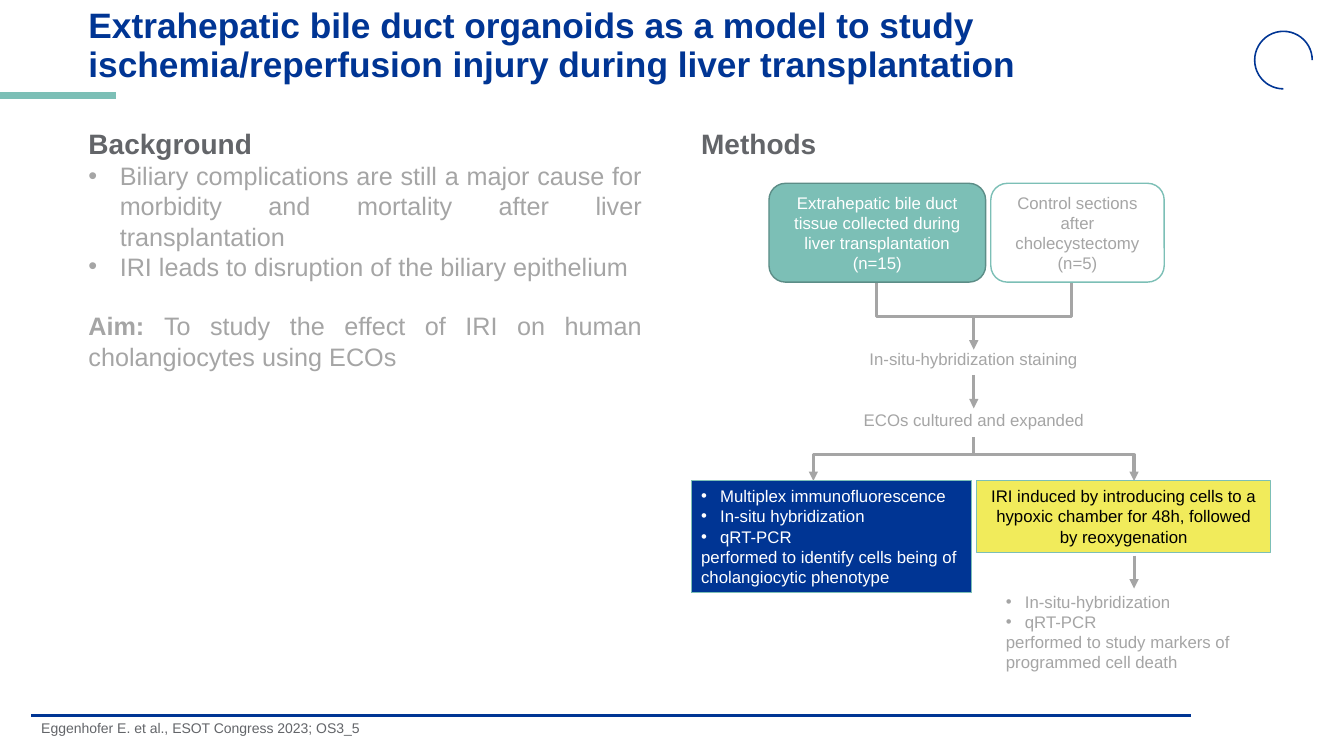
from lxml.etree import SubElement
from pptx import Presentation
from pptx.dml.color import RGBColor
from pptx.enum.shapes import MSO_CONNECTOR, MSO_SHAPE
from pptx.enum.text import MSO_ANCHOR, PP_ALIGN
from pptx.oxml.ns import qn
from pptx.util import Cm, Pt

NAVY, TEAL, EDGE, YELLOW = "003594", "7CBFB6", "5C8D87", "F1EB5B"
DARK, GREY, WHITE, BLACK = "636569", "A5A5A5", "FFFFFF", "000000"
LEFT, MID, JUST = PP_ALIGN.LEFT, PP_ALIGN.CENTER, PP_ALIGN.JUSTIFY

TITLE = ("Extrahepatic bile duct organoids as a model to study "
         "ischemia/reperfusion injury during liver transplantation")
SOURCE = "Eggenhofer E. et al., ESOT Congress 2023; OS3_5"
BACK = [
    "Background",
    "•Biliary complications are still a major cause for morbidity and mortality after liver transplantation",
    "•IRI leads to disruption of the biliary epithelium",
    "Aim: ",
]
AIM = "To study the effect of IRI on human cholangiocytes using ECOs"

STEM, WEST, EAST = 24.54, 20.5, 28.58
JOIN, FORK, ROW = 7.98, 11.46, 12.12
BOXES = [
    ((19.38, 4.62, 5.46, 2.49), MSO_SHAPE.ROUNDED_RECTANGLE, TEAL, EDGE, 1, WHITE, MID,
     ["Extrahepatic bile duct tissue collected during liver transplantation (n=15)"]),
    ((24.97, 4.62, 4.37, 2.49), MSO_SHAPE.ROUNDED_RECTANGLE, None, TEAL, 1, GREY, MID,
     ["Control sections after cholecystectomy (n=5)"]),
    ((17.42, ROW, 7.06, 2.82), MSO_SHAPE.RECTANGLE, NAVY, TEAL, 0.75, WHITE, LEFT,
     ["•Multiplex immunofluorescence", "•In-situ hybridization", "•qRT-PCR",
      "performed to identify cells being of cholangiocytic phenotype"]),
    ((24.61, ROW, 7.42, 1.8), MSO_SHAPE.RECTANGLE, YELLOW, TEAL, 0.75, BLACK, MID,
     ["IRI induced by introducing cells to a hypoxic chamber for 48h, followed by reoxygenation"]),
]
NOTES = [
    ((21.21, 8.66, 6.65, 0.76), MID, ["In-situ-hybridization staining"]),
    ((20.57, 10.21, 7.95, 0.76), MID, ["ECOs cultured and expanded"]),
    ((25.1, 14.78, 6.96, 2.31), LEFT,
     ["•In-situ-hybridization", "•qRT-PCR", "performed to study markers of programmed cell death"]),
]
STEMS = [
    (STEM, JOIN, 8.81, True),
    (STEM, 9.45, 10.29, True),
    (STEM, 11.02, FORK, False),
    (EAST, 14, 14.83, True),
]
ELBOWS = [
    (JOIN, 22.1, 7.11, False),
    (JOIN, 27, 7.11, False),
    (FORK, WEST, ROW, True),
    (FORK, EAST, ROW, True),
]


def color(code):
    return RGBColor.from_string(code)


def write(shape, lines, size, code, align=LEFT, bold=False, anchor=MSO_ANCHOR.TOP, indent=0.48):
    frame = shape.text_frame
    frame.word_wrap = True
    frame.vertical_anchor = anchor
    frame.text = "\n".join(line.lstrip("•") for line in lines)
    for para, line in zip(frame.paragraphs, lines):
        para.alignment = align
        if line.startswith("•"):
            props = para._p.get_or_add_pPr()
            props.set("marL", str(Cm(indent)))
            props.set("indent", str(-Cm(indent)))
            SubElement(props, qn("a:buFont"), typeface="Arial")
            SubElement(props, qn("a:buChar"), char="•")
        for run in para.runs:
            style(run, size, code, bold)
    return frame.paragraphs


def style(run, size, code, bold):
    font = run.font
    font.name, font.size, font.bold = "Arial", Pt(size), bold
    font.color.rgb = color(code)


def label(area, *args, **opts):
    return write(slide.shapes.add_textbox(*map(Cm, area)), *args, **opts)


def link(kind, ends, code, width, arrow=False):
    line = slide.shapes.add_connector(kind, *map(Cm, ends))
    line.line.color.rgb = color(code)
    line.line.width = Pt(width)
    if arrow:
        SubElement(line.line._get_or_add_ln(), qn("a:tailEnd"), type="triangle")
    SubElement(line._element.spPr, qn("a:effectLst"))
    return line


def block(area, kind, fill, edge, width):
    shape = slide.shapes.add_shape(kind, *map(Cm, area))
    shape.shadow.inherit = False
    if fill:
        shape.fill.solid()
        shape.fill.fore_color.rgb = color(fill)
    else:
        shape.fill.background()
    shape.line.color.rgb = color(edge)
    shape.line.width = Pt(width)
    return shape


deck = Presentation()
deck.slide_width, deck.slide_height = Cm(33.87), Cm(19.05)
slide = deck.slides.add_slide(deck.slide_layouts[6])

link(MSO_CONNECTOR.STRAIGHT, (0, 2.41, 2.92, 2.41), TEAL, 4.5)
link(MSO_CONNECTOR.STRAIGHT, (0.79, 18.03, 30.02, 18.03), NAVY, 1.5)
ring = block((31.62, 0.79, 1.45, 1.45), MSO_SHAPE.ARC, None, NAVY, 1.13)
ring.adjustments[0], ring.adjustments[1] = 54, 0

head = label((1.98, 0.25, 29.21, 1.85), [TITLE], 25.2, NAVY, bold=True, anchor=MSO_ANCHOR.MIDDLE)
head[0].line_spacing = 0.9
foot = label((0.79, 18.06, 19.91, 0.86), [SOURCE], 10, DARK)
foot[0].line_spacing = 0.9

back = label((1.98, 3.07, 14.45, 6.5), BACK, 18, GREY, JUST, indent=0.79)
style(back[0].runs[0], 20, DARK, True)
aim = back[-1]
aim.space_before = Pt(21)
aim.runs[0].font.bold = True
goal = aim.add_run()
goal.text = AIM
style(goal, 18, GREY, False)
label((17.42, 3.07, 3.81, 1.12), ["Methods"], 20, DARK, JUST, bold=True)

for x, top, end, arrow in STEMS:
    link(MSO_CONNECTOR.STRAIGHT, (x, top, x, end), GREY, 2.25, arrow)
for y, x, end, arrow in ELBOWS:
    elbow = link(MSO_CONNECTOR.ELBOW, (STEM, y, x, end), GREY, 2.25, arrow)
    guides = elbow._element.spPr.find(qn("a:prstGeom")).get_or_add_avLst()
    SubElement(guides, qn("a:gd"), name="adj1", fmla="val 100000")

for area, kind, fill, edge, width, ink, align, lines in BOXES:
    anchor = MSO_ANCHOR.MIDDLE if kind == MSO_SHAPE.ROUNDED_RECTANGLE else MSO_ANCHOR.TOP
    write(block(area, kind, fill, edge, width), lines, 12, ink, align, anchor=anchor)
for area, align, lines in NOTES:
    label(area, lines, 12, GREY, align)

deck.save("out.pptx")
